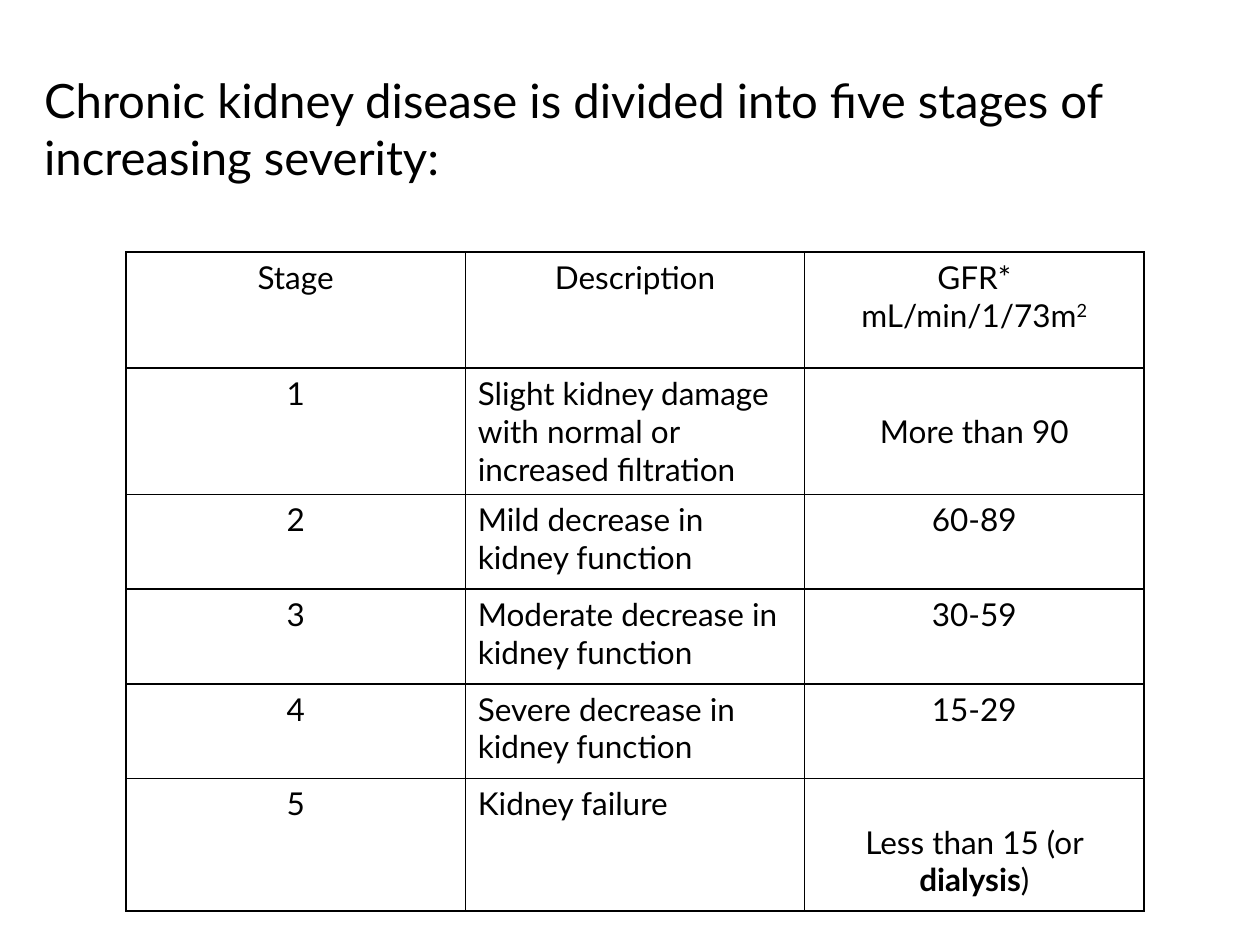
from dataclasses import dataclass

from lxml.etree import SubElement
from pptx import Presentation
from pptx.dml.color import RGBColor
from pptx.enum.text import MSO_ANCHOR, PP_ALIGN
from pptx.oxml.ns import qn
from pptx.util import Cm, Pt

HUES = {"ink": "000000", "page": "FFFFFF"}
FONT = "Lato"


@dataclass
class Bit:
    """A run of text and its style."""
    text: str
    bold: bool = False
    base: int = 0


@dataclass
class Entry:
    """The lines of one table cell and how they sit."""
    lines: list[list[Bit]]
    align: PP_ALIGN = PP_ALIGN.CENTER
    anchor: MSO_ANCHOR = MSO_ANCHOR.TOP
    foot: float = 0.13


def mid(text: str) -> Entry:
    """Return a centred entry of one line."""
    return Entry([[Bit(text)]])


def left(text: str) -> Entry:
    """Return a left-aligned entry of one paragraph."""
    return Entry([[Bit(text)]], PP_ALIGN.LEFT)


ROWS = [
    [mid("Stage"), mid("Description"),
     Entry([[Bit("GFR*")], [Bit("mL/min/1/73m"), Bit("2", base=30000)]])],
    [mid("1"), left("Slight kidney damage with normal or increased filtration"),
     Entry([[Bit("More than 90")]], anchor=MSO_ANCHOR.MIDDLE)],
    [mid("2"), left("Mild decrease in kidney function"), mid("60-89")],
    [mid("3"), left("Moderate decrease in kidney function"), mid("30-59")],
    [mid("4"), left("Severe decrease in kidney function"), mid("15-29")],
    [mid("5"), left("Kidney failure"),
     Entry([[Bit("Less than 15 (or "), Bit("dialysis", bold=True), Bit(")")]],
           anchor=MSO_ANCHOR.BOTTOM, foot=0.25)],
]
HIGHS = [2.34] + [1.91] * 4 + [2.67]


def write(frame, lines: list[list[Bit]], size: int, align: PP_ALIGN) -> None:
    """Fill a text frame run by run."""
    for spot, bits in enumerate(lines):
        para = frame.add_paragraph() if spot else frame.paragraphs[0]
        para.alignment = align
        for bit in bits:
            run = para.add_run()
            run.text = bit.text
            font = run.font
            font.name, font.size, font.bold = FONT, Pt(size), bit.bold
            font.color.rgb = RGBColor.from_string(HUES["ink"])
            if bit.base:
                run._r.get_or_add_rPr().set("baseline", str(bit.base))


def edge(cell) -> None:
    """Rule all four sides of a cell."""
    props = cell._tc.get_or_add_tcPr()
    for side in ("a:lnL", "a:lnR", "a:lnT", "a:lnB"):
        line = SubElement(props, qn(side), w=str(Pt(1)))
        fill = SubElement(line, qn("a:solidFill"))
        SubElement(fill, qn("a:srgbClr"), val=HUES["ink"])


def title(slide) -> None:
    """Add the heading."""
    box = slide.shapes.add_textbox(Cm(0.64), Cm(1.3), Cm(24.33), Cm(2.57))
    frame = box.text_frame
    frame.word_wrap = True
    frame.vertical_anchor = MSO_ANCHOR.MIDDLE
    text = "Chronic kidney disease is divided into five stages of increasing severity:"
    write(frame, [[Bit(text)]], 27, PP_ALIGN.LEFT)


def grid(slide) -> None:
    """Add the table of stages."""
    table = slide.shapes.add_table(
        len(ROWS), 3, Cm(2.54), Cm(5.08), Cm(20.52), Cm(sum(HIGHS))).table
    table.first_row = table.horz_banding = False
    for col in table.columns:
        col.width = Cm(6.84)
    for row, high, items in zip(table.rows, HIGHS, ROWS):
        row.height = Cm(high)
        for cell, item in zip(row.cells, items):
            edge(cell)
            cell.fill.solid()
            cell.fill.fore_color.rgb = RGBColor.from_string(HUES["page"])
            cell.vertical_anchor = item.anchor
            cell.margin_bottom = Cm(item.foot)
            write(cell.text_frame, item.lines, 18, item.align)


def main() -> None:
    """Build and save the slide."""
    deck = Presentation()
    deck.slide_width, deck.slide_height = Cm(25.4), Cm(19.05)
    slide = deck.slides.add_slide(deck.slide_layouts[6])
    title(slide)
    grid(slide)
    deck.save("out.pptx")


if __name__ == "__main__":
    main()
